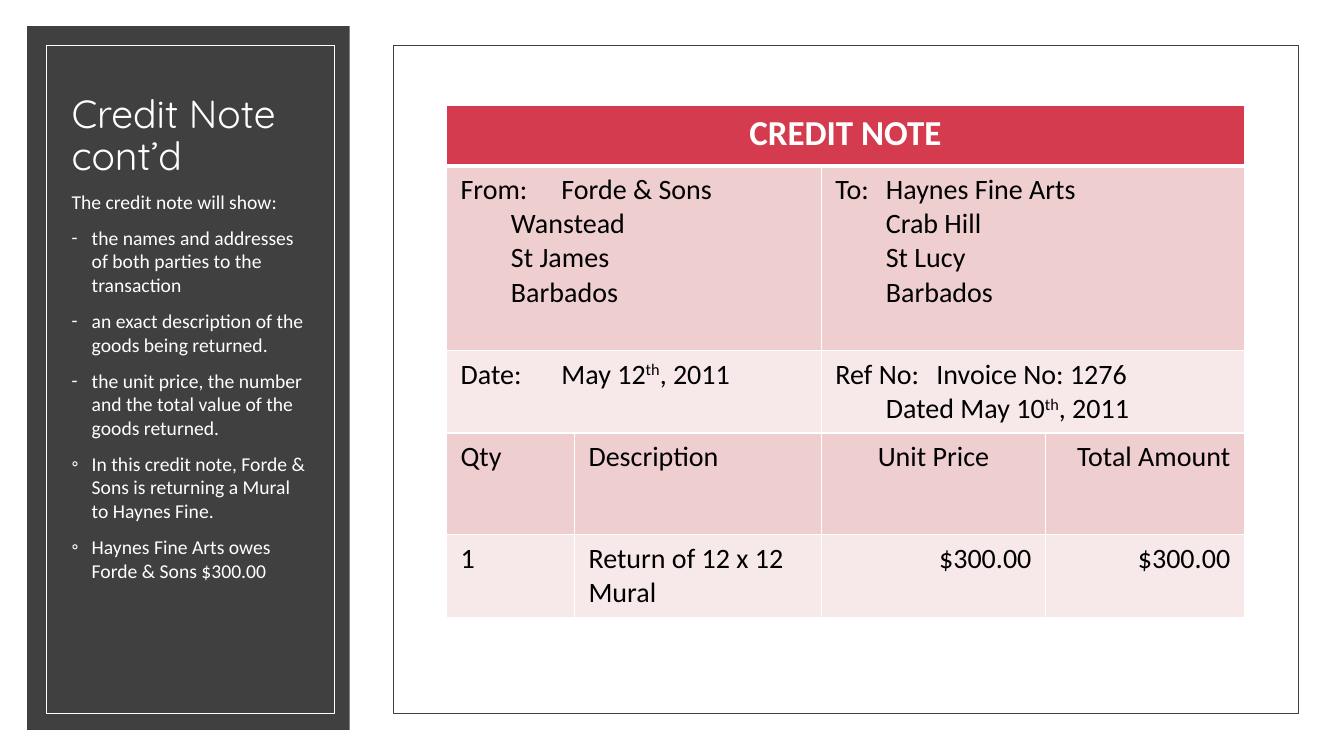
"""Build the credit note slide: a dark explanatory panel beside a framed credit note table."""
from dataclasses import dataclass
from typing import Optional

from lxml.etree import SubElement
from pptx import Presentation
from pptx.dml.color import RGBColor
from pptx.enum.shapes import MSO_SHAPE
from pptx.enum.text import MSO_ANCHOR as Anchor, MSO_AUTO_SIZE as AutoSize, PP_ALIGN as Align
from pptx.oxml.ns import qn
from pptx.util import Pt

COLORS = {"white": "FFFFFF", "charcoal": "404040", "black": "000000",
          "crimson": "D43B4E", "rose": "EFCED0", "blush": "F7E8E9"}
COLUMN_WIDTHS = [91.4, 176.4, 160, 142]


@dataclass
class Panel:
    left: float
    top: float
    width: float
    height: float
    fill: Optional[str] = None
    line: Optional[str] = None


@dataclass
class Line:
    text: str
    bullet: Optional[str] = None


@dataclass
class Entry:
    text: str
    span: int = 1
    align: Align = Align.LEFT


@dataclass
class Row:
    height: float
    fill: str
    entries: list[Entry]


PANELS = [
    Panel(19.4, 18.7, 230.4, 502.6, fill="charcoal"),
    Panel(33.1, 32.4, 205.9, 477.4, line="white"),
    Panel(280.8, 32.4, 646.6, 477.4, line="charcoal"),
]
EXPLANATION = [
    Line("The credit note will show:"),
    Line("the names and addresses of both parties to the transaction", "-"),
    Line("an exact description of the goods being returned.", "-"),
    Line("the unit price, the number and the total value of the goods returned.", "-"),
    Line("In this credit note, Forde & Sons is returning a Mural to Haynes Fine.", "◦"),
    Line("Haynes Fine Arts owes Forde & Sons $300.00", "◦"),
]
ROWS = [
    Row(43, "crimson", [Entry("CREDIT NOTE", 4, Align.CENTER)]),
    Row(132, "rose", [
        Entry("From:\tForde & Sons\n\tWanstead\n\tSt James\n\tBarbados", 2),
        Entry("To:\tHaynes Fine Arts\n\tCrab Hill\n\tSt Lucy\n\tBarbados", 2)]),
    Row(59, "blush", [
        Entry("Date:\tMay 12^th^, 2011", 2),
        Entry("Ref No:\tInvoice No: 1276\n\tDated May 10^th^, 2011", 2)]),
    Row(72.5, "rose", [
        Entry("Qty"), Entry("Description"),
        Entry("Unit Price", align=Align.CENTER), Entry("Total Amount", align=Align.RIGHT)]),
    Row(59, "blush", [
        Entry("1"), Entry("Return of 12 x 12 Mural"),
        Entry("$300.00", align=Align.RIGHT), Entry("$300.00", align=Align.RIGHT)]),
]


def rgb(color: str) -> RGBColor:
    """Look up a named colour."""
    return RGBColor.from_string(COLORS[color])


def write(frame, lines: list[Line], *, size: float, color: str, font: str = "Calibri",
          bold: bool = False, align: Align = Align.LEFT, gap: float = 0,
          spacing: float = 1.0, tab: Optional[float] = None) -> None:
    """Fill a text frame; text between carets is superscript."""
    for index, line in enumerate(lines):
        paragraph = frame.paragraphs[0] if index == 0 else frame.add_paragraph()
        properties = paragraph._p.get_or_add_pPr()
        indent = Pt(14.4) if line.bullet else 0
        properties.set("marL", str(indent))
        properties.set("indent", str(-indent))
        if line.bullet:
            bullet_color = SubElement(properties, qn("a:buClr"))
            SubElement(bullet_color, qn("a:srgbClr"), val=COLORS[color])
            SubElement(properties, qn("a:buFont"), typeface=font)
            SubElement(properties, qn("a:buChar"), char=line.bullet)
        else:
            SubElement(properties, qn("a:buNone"))
        if tab:
            stops = SubElement(properties, qn("a:tabLst"))
            SubElement(stops, qn("a:tab"), pos=str(Pt(tab)), algn="l")
        paragraph.alignment = align
        paragraph.line_spacing = spacing
        paragraph.space_before = Pt(gap if index else 0)
        paragraph.space_after = Pt(0)
        for part, text in enumerate(line.text.split("^")):
            run = paragraph.add_run()
            run.text = text
            run.font.name, run.font.size, run.font.bold = font, Pt(size), bold
            run.font.color.rgb = rgb(color)
            if part % 2:
                run._r.get_or_add_rPr().set("baseline", "30000")


def draw_panel(slide, panel: Panel) -> None:
    """Draw one filled or outlined rectangle."""
    rectangle = slide.shapes.add_shape(
        MSO_SHAPE.RECTANGLE, Pt(panel.left), Pt(panel.top), Pt(panel.width), Pt(panel.height))
    rectangle.shadow.inherit = False
    if panel.fill:
        rectangle.fill.solid()
        rectangle.fill.fore_color.rgb = rgb(panel.fill)
    else:
        rectangle.fill.background()
    if panel.line:
        rectangle.line.color.rgb = rgb(panel.line)
        rectangle.line.width = Pt(0.5)
    else:
        rectangle.line.fill.background()


def place(slide, placeholder, top: float, height: float, anchor: Anchor):
    """Bring a placeholder to the front of the dark panel and return its text frame."""
    slide.shapes.element.append(placeholder.element)
    placeholder.left, placeholder.top = Pt(43.9), Pt(top)
    placeholder.width, placeholder.height = Pt(182.2), Pt(height)
    frame = placeholder.text_frame
    frame.word_wrap, frame.auto_size, frame.vertical_anchor = True, AutoSize.NONE, anchor
    return frame


def style_cell(cell, fill: str, top: float, bottom: float) -> None:
    """Set white borders, margins and fill of a cell."""
    properties = cell._tc.get_or_add_tcPr()
    for side, width in (("L", 1), ("R", 1), ("T", top), ("B", bottom)):
        border = SubElement(properties, qn(f"a:ln{side}"), w=str(Pt(width)))
        SubElement(SubElement(border, qn("a:solidFill")), qn("a:srgbClr"), val=COLORS["white"])
    cell.margin_left = cell.margin_right = Pt(10)
    cell.margin_top = cell.margin_bottom = Pt(5)
    cell.fill.solid()
    cell.fill.fore_color.rgb = rgb(fill)


def draw_credit_note(slide) -> None:
    """Draw the credit note table."""
    table = slide.shapes.add_table(
        len(ROWS), len(COLUMN_WIDTHS), Pt(319), Pt(75.4), Pt(sum(COLUMN_WIDTHS)),
        Pt(sum(row.height for row in ROWS))).table
    table.first_row = table.horz_banding = False
    for column, width in zip(table.columns, COLUMN_WIDTHS):
        column.width = Pt(width)
    for index, row in enumerate(ROWS):
        table.rows[index].height = Pt(row.height)
        header = index == 0
        for column in range(len(COLUMN_WIDTHS)):
            style_cell(table.cell(index, column), row.fill,
                       top=3 if index == 1 else 1, bottom=3 if header else 1)
        start = 0
        for entry in row.entries:
            cell = table.cell(index, start)
            if entry.span > 1:
                cell.merge(table.cell(index, start + entry.span - 1))
            write(cell.text_frame, [Line(text) for text in entry.text.split("\n")],
                  size=25 if header else 20, color="white" if header else "black",
                  bold=header, align=entry.align, tab=72 if "\t" in entry.text else None)
            start += entry.span


def main() -> None:
    """Assemble and save the slide."""
    deck = Presentation()
    deck.slide_width, deck.slide_height = Pt(960), Pt(540)
    slide = deck.slides.add_slide(deck.slide_layouts[1])
    slide.background.fill.solid()
    slide.background.fill.fore_color.rgb = rgb("white")
    heading, explanation = slide.shapes.title, slide.placeholders[1]
    for panel in PANELS:
        draw_panel(slide, panel)
    write(place(slide, heading, 48.2, 83.5, Anchor.BOTTOM), [Line("Credit Note cont’d")],
          size=28, color="white", font="Quicksand", spacing=0.9)
    write(place(slide, explanation, 131.8, 340.6, Anchor.TOP), EXPLANATION,
          size=14, color="white", gap=9)
    draw_credit_note(slide)
    deck.save("out.pptx")


if __name__ == "__main__":
    main()
